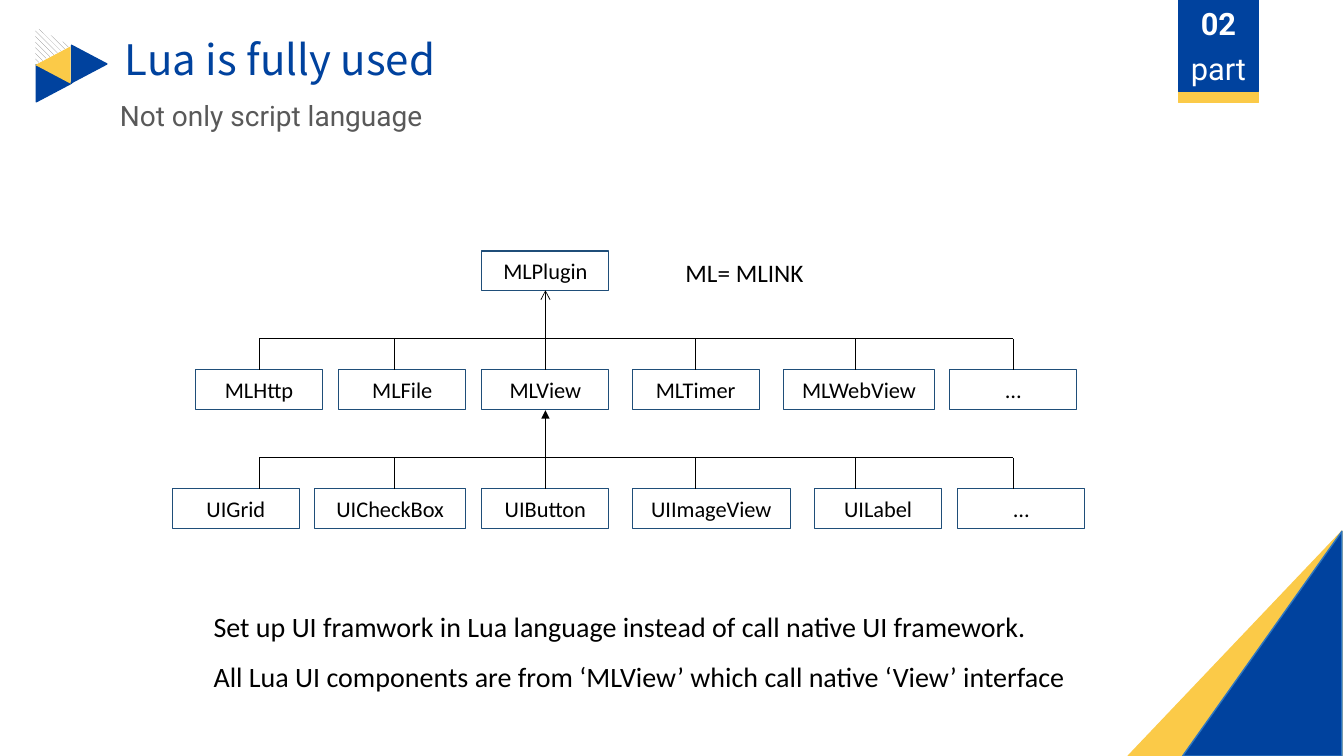
from lxml.etree import SubElement
from pptx import Presentation
from pptx.dml.color import RGBColor
from pptx.enum.dml import MSO_PATTERN as Pattern
from pptx.enum.shapes import MSO_CONNECTOR as Connector, MSO_SHAPE as Shape
from pptx.enum.text import MSO_ANCHOR as Anchor, MSO_AUTO_SIZE as Fit, PP_ALIGN as Align
from pptx.oxml.ns import qn
from pptx.util import Emu, Pt

COLORS = {"blue": "00429E", "yellow": "FBCA48", "edge": "2D76C2", "frame": "1F4E79",
          "gray": "595959", "hatch": "808080", "white": "FFFFFF", "black": "000000"}


def color(name):
    return RGBColor.from_string(COLORS[name])


def px(value):
    return Emu(value * 9144)


class SlideBuilder:
    """Draws styled elements on the current slide, with 100 px to the inch."""

    def __init__(self, width, height):
        self.deck = Presentation()
        self.deck.slide_width, self.deck.slide_height = px(width), px(height)
        self.page = self.deck.slides.add_slide(self.deck.slide_layouts[6])

    def label(self, box, lines, size, font, tint, frame=None, align=Align.LEFT,
              bold=False, spacing=None):
        settings = {"word_wrap": True, "vertical_anchor": Anchor.TOP, **(frame or {})}
        for name, value in settings.items():
            setattr(box.text_frame, name, value)
        for index, line in enumerate(lines):
            para = box.text_frame.add_paragraph() if index else box.text_frame.paragraphs[0]
            para.alignment, para.line_spacing = align, spacing
            span = para.add_run()
            span.text = line
            for name, value in {"size": Pt(size), "name": font, "bold": bold}.items():
                setattr(span.font, name, value)
            span.font.color.rgb = color(tint)

    def shape(self, kind, place, fill=None, line=None, weight=1, turn=0, mirror=False):
        box = self.page.shapes.add_shape(kind, *map(px, place))
        box.shadow.inherit = False
        box.rotation = turn
        if fill == "hatch":
            box.fill.patterned()
            box.fill.pattern = Pattern.WIDE_DOWNWARD_DIAGONAL
            box.fill.fore_color.rgb = color(fill)
            box.fill.back_color.rgb = color("white")
        elif fill:
            box.fill.solid()
            box.fill.fore_color.rgb = color(fill)
        else:
            box.fill.background()
        if line:
            box.line.color.rgb = color(line)
            box.line.width = Pt(weight)
        else:
            box.line.fill.background()
        if mirror:
            box._element.spPr.xfrm.set("flipH", "1")
        return box

    def text(self, place, lines, size, font, tint, wrap=True, spacing=None):
        box = self.page.shapes.add_textbox(*map(px, place))
        frame = {"word_wrap": wrap, "auto_size": Fit.SHAPE_TO_FIT_TEXT}
        self.label(box, lines, size, font, tint, frame, spacing=spacing)

    def badge(self, top, caption, bold):
        box = self.shape(Shape.RECTANGLE, (1169, top, 79, 47), "blue", "blue", 0.75)
        self.label(box, [caption], 22, "Roboto", "white", align=Align.CENTER, bold=bold)

    def node(self, left, top, caption, width=126):
        box = self.shape(Shape.RECTANGLE, (left, top, width, 39), line="frame", weight=0.75)
        self.label(box, [caption], 16, "Calibri", "black",
                   {"vertical_anchor": Anchor.MIDDLE}, Align.CENTER)

    def line(self, start, end, arrow=None):
        link = self.page.shapes.add_connector(Connector.STRAIGHT, *map(px, start + end))
        link.line.color.rgb = color("black")
        link.line.width = Pt(0.5)
        if arrow:
            SubElement(link._element.spPr.find(qn("a:ln")), qn("a:tailEnd"), type=arrow)
        SubElement(link._element.spPr, qn("a:effectLst"))

    def branch(self, top, parent_bottom, arrow, nodes):
        bus, stems = top - 31, (257, 391, 541, 690, 848, 1005)
        for left, *details in nodes:
            self.node(left, top, *details)
        for stem in stems:
            self.line((stem, top), (stem, bus))
        self.line((stems[0], bus), (stems[-1], bus))
        self.line((541, bus), (541, parent_bottom), arrow)


def main():
    slide = SlideBuilder(1333, 750)

    for left, top, turn, fill, line in (
            (35, 65, 90, "blue", "blue"), (70, 46, 90, "blue", "blue"),
            (34, 47, 270, "yellow", None), (34, 28, 90, "hatch", None)):
        slide.shape(Shape.ISOSCELES_TRIANGLE, (left, top, 37, 35), fill, line, turn=turn)

    slide.shape(Shape.RECTANGLE, (1169, 86, 79, 16), "yellow", "yellow")
    slide.badge(44, "part", False)
    slide.badge(0, "02", True)

    slide.text((114, 28, 725, 61), ["Lua is fully used"], 30, "Noto Sans CJK SC", "blue")
    slide.text((109, 93, 732, 44), ["Not only script language"], 20, "Roboto", "gray")

    for left, fill, line in ((1119, "yellow", "yellow"), (1173, "blue", "edge")):
        slide.shape(Shape.RIGHT_TRIANGLE, (left, 527, 1331 - left, 223), fill, line, mirror=True)

    slide.node(478, 249, "MLPlugin")
    slide.branch(367, 288, "arrow", (
        (194, "MLHttp"), (336, "MLFile"), (478, "MLView"),
        (627, "MLTimer"), (777, "MLWebView", 150), (942, "…")))
    slide.branch(485, 407, "triangle", (
        (171, "UIGrid"), (312, "UICheckBox", 150), (478, "UIButton"),
        (627, "UIImageView", 157), (808, "UILabel"), (950, "…")))

    slide.text((202, 583, 874, 108), [
        "Set up UI framwork in Lua language instead of call native UI framework.",
        "All Lua UI components are from ‘MLView’ which call native ‘View’ interface",
    ], 20, "Calibri", "black", wrap=False, spacing=1.5)
    slide.text((670, 250, 139, 40), ["ML= MLINK"], 18, "Calibri", "black", wrap=False)

    slide.deck.save("out.pptx")


if __name__ == "__main__":
    main()
